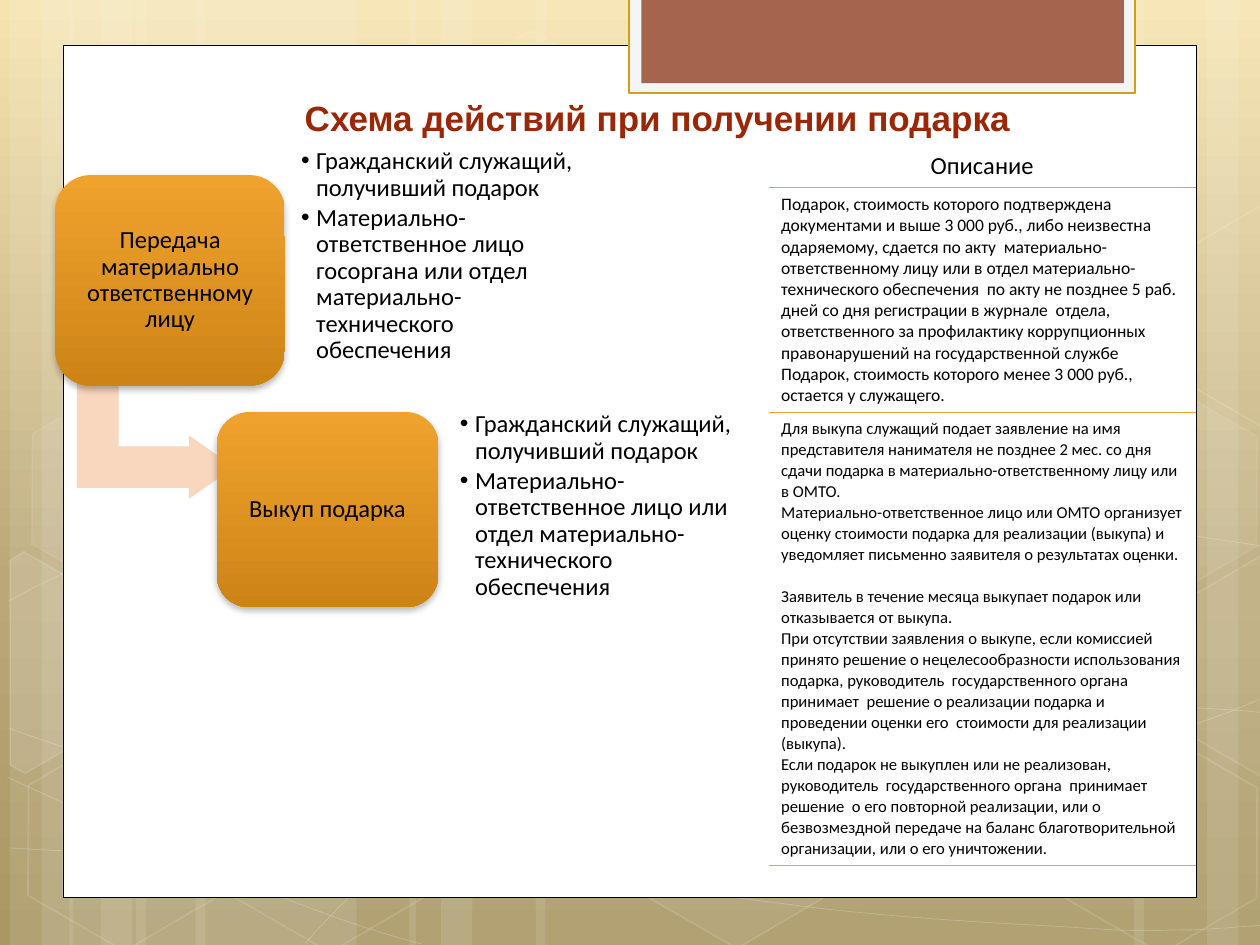
"""Builds a slide on how a civil servant handles a received gift."""
from copy import deepcopy

from lxml.etree import SubElement
from pptx import Presentation
from pptx.dml.color import RGBColor
from pptx.enum.shapes import MSO_SHAPE
from pptx.enum.text import MSO_ANCHOR, PP_ALIGN
from pptx.oxml.ns import qn
from pptx.util import Inches, Pt

WHITE = RGBColor(0xFF, 0xFF, 0xFF)
BLACK = RGBColor(0, 0, 0)
PAPER = RGBColor(0xF5, 0xF5, 0xF5)
GOLD = RGBColor(0xD2, 0xA0, 0x10)
BROWN = RGBColor(0xA5, 0x64, 0x4E)
RED = RGBColor(0x9A, 0x27, 0x08)
PEACH = RGBColor(0xF8, 0xD7, 0xBE)
ORANGE = RGBColor(0xF0, 0xA2, 0x2E)
DARK_ORANGE = RGBColor(0xCE, 0x84, 0x15)
SKY = [(0, RGBColor(0xF6, 0xE4, 0xB0)), (0.62, RGBColor(0xBA, 0xA8, 0x78)),
       (1, RGBColor(0xA9, 0x97, 0x64))]
AMBER = [(0, ORANGE), (1, DARK_ORANGE)]

TITLE = "Схема действий при получении подарка"
STEPS = [
    {"name": "Передача материально ответственному лицу",
     "block": (0.44, 1.39, 1.82, 1.67), "list": (2.33, 1.48, 2.29, 1.11),
     "people": ["Гражданский служащий, получивший подарок",
                "Материально-ответственное лицо госоргана или отдел "
                "материально-технического обеспечения"]},
    {"name": "Выкуп подарка",
     "block": (1.72, 3.27, 1.76, 1.55), "list": (3.59, 3.18, 2.32, 1.67),
     "people": ["Гражданский служащий, получивший подарок",
                "Материально-ответственное лицо или отдел "
                "материально-технического обеспечения"]},
]
ROWS = [
    {"height": 0.34, "size": 14, "para": {"alignment": PP_ALIGN.CENTER}, "texts": ["Описание"]},
    {"height": 1.78, "size": 10, "para": {}, "texts": [
        "Подарок, стоимость которого подтверждена документами и выше 3 000 руб., либо неизвестна "
        "одаряемому, сдается по акту  материально-ответственному лицу или в отдел "
        "материально-технического обеспечения  по акту не позднее 5 раб. дней со дня регистрации "
        "в журнале  отдела, ответственного за профилактику коррупционных правонарушений на "
        "государственной службе",
        "Подарок, стоимость которого менее 3 000 руб., остается у служащего."]},
    {"height": 3.6, "size": 9.5, "para": {"line_spacing": Pt(12)}, "gap_before": 2, "texts": [
        "Для выкупа служащий подает заявление на имя представителя нанимателя не позднее 2 мес. "
        "со дня сдачи подарка в материально-ответственному лицу или в ОМТО.",
        "Материально-ответственное лицо или ОМТО организует оценку стоимости подарка для "
        "реализации (выкупа) и уведомляет письменно заявителя о результатах оценки.",
        "Заявитель в течение месяца выкупает подарок или отказывается от выкупа.",
        "При отсутствии заявления о выкупе, если комиссией принято решение о нецелесообразности "
        "использования подарка, руководитель  государственного органа  принимает  решение о "
        "реализации подарка и проведении оценки его  стоимости для реализации (выкупа).",
        "Если подарок не выкуплен или не реализован, руководитель  государственного органа  "
        "принимает решение  о его повторной реализации, или о безвозмездной передаче на баланс "
        "благотворительной организации, или о его уничтожении."]},
]
BORDERS = [("lnT", 0), ("lnB", 1)]
BORDER_WIDTHS = [0, 0.5, 0.5, 1]
STRIPES = [(1.08, 1.75), (0.08, 0.5), (0.33, 0.83), (1.55, 1.75), (0.55, 0.5), (0.8, 0.83),
           (7.33, 1.75), (9.58, 0.5), (9, 0.83), (4.25, 3.08), (3.25, 0.5), (3.5, 0.83)]
CURVES = [
    [(0.07, 6.73), (0.61, 6.76), (1.15, 6.79), (1.9, 6.78), (2.65, 6.77), (3.58, 6.75),
     (4.58, 6.65), (5.58, 6.55), (7, 6.36), (7.92, 6.17), (8.83, 5.98), (9.77, 5.68), (10.07, 5.51)],
    [(0.07, 4.77), (0.36, 4.61), (0.65, 4.46), (1.21, 4.31), (1.78, 4.16), (2.59, 3.94),
     (3.47, 3.87), (4.36, 3.8), (5.44, 3.79), (6.54, 3.87), (7.64, 3.95), (9.47, 4.26), (10.07, 4.34)],
    [(0.06, 6.17), (1.27, 6.72), (2.47, 7.27), (3.34, 7.49)],
    [(0.07, 5.78), (0.38, 5.89), (0.7, 6), (1.28, 6.16), (1.86, 6.31), (2.73, 6.56), (3.57, 6.73),
     (4.4, 6.9), (5.45, 7.08), (6.28, 7.18), (7.11, 7.29), (8, 7.33), (8.53, 7.36),
     (9.05, 7.4), (9.19, 7.38), (9.45, 7.38), (9.71, 7.37), (9.89, 7.35), (10.07, 7.34)],
    [(2.42, 7.49), (2.6, 7.29), (2.78, 7.09), (3.02, 6.91), (3.26, 6.73), (3.6, 6.53), (3.88, 6.39),
     (4.16, 6.25), (4.33, 6.19), (4.7, 6.09), (5.06, 5.99), (5.73, 5.85), (6.08, 5.78),
     (6.44, 5.71), (6.49, 5.71), (6.8, 5.69), (7.11, 5.66), (7.6, 5.63), (7.94, 5.62),
     (8.29, 5.61), (8.86, 5.62), (9.53, 5.62), (9.71, 5.63), (9.88, 5.64), (10.06, 5.66)],
]
HEXAGONS = [(3.34, 0.36, 4, 8), (4.97, 5.89, 6, 12), (0.11, 5.91, 0, 12), (0.14, 3.12, 7, 8),
            (1.74, 5.92, 0, 12), (7.53, 4.53, 10, 12), (8.34, 5.93, 0, 12), (8.34, 3.14, 7, 8)]
CUT_HEXAGONS = [
    ([(0.08, 4.45), (0.19, 4.38), (0.96, 4.82), (0.95, 5.7), (0.2, 6.14), (0.08, 6.07)], 10),
    ([(9.26, 4.85), (10.01, 4.41), (10.09, 4.46), (10.09, 6.13), (10.02, 6.17), (9.26, 5.73)], 4),
    ([(9.26, 2.07), (10.01, 1.63), (10.1, 1.68), (10.09, 3.35), (10.02, 3.39), (9.26, 2.95)], 0),
]

deck = Presentation()
deck.slide_width, deck.slide_height = Inches(10), Inches(7.5)
page = deck.slides.add_slide(deck.slide_layouts[6])


def assign(target, values):
    for name, value in values.items():
        setattr(target, name, value)


def set_opacity(shape, query, percent):
    for color in shape.element.spPr.xpath(query):
        SubElement(color, qn("a:alpha"), val=str(percent * 1000))


def decorate(shape, fill=None, fill_opacity=100, line=None, width=1, line_opacity=100):
    shape.shadow.inherit = False
    if fill is not None and fill_opacity:
        shape.fill.solid()
        shape.fill.fore_color.rgb = fill
        set_opacity(shape, "./a:solidFill/a:srgbClr", fill_opacity)
    else:
        shape.fill.background()
    if line is None:
        shape.line.fill.background()
    else:
        shape.line.color.rgb = line
        shape.line.width = Pt(width)
        set_opacity(shape, "./a:ln/a:solidFill/a:srgbClr", line_opacity)
    return shape


def add_block(kind, place, **look):
    return decorate(page.shapes.add_shape(kind, *map(Inches, place)), **look)


def add_outline(points, close, **look):
    points = [(Inches(x), Inches(y)) for x, y in points]
    builder = page.shapes.build_freeform(*points[0], scale=1.0)
    builder.add_line_segments(points[1:], close=close)
    return decorate(builder.convert_to_shape(), **look)


def bend(outline):
    segments = outline.element.spPr.xpath(".//a:lnTo")
    drawing = segments[0].getparent()
    for first in range(0, len(segments), 3):
        curve = SubElement(drawing, qn("a:cubicBezTo"))
        for segment in segments[first:first + 3]:
            curve.append(segment[0])
            drawing.remove(segment)


def set_gradient(fill, element, stops):
    fill.gradient()
    fill.gradient_angle = 270
    stop_list = next(element.iter(qn("a:gsLst")))
    while len(stop_list) < len(stops):
        stop_list.append(deepcopy(stop_list[0]))
    for stop, (position, color) in zip(fill.gradient_stops, stops):
        stop.position = position
        stop.color.rgb = color


def write(frame, texts, font, para_format, inset=None, anchor=MSO_ANCHOR.MIDDLE, bullet=False):
    assign(frame, {"word_wrap": True, "vertical_anchor": anchor})
    if inset is not None:
        assign(frame, {f"margin_{side}": Inches(inset) for side in ("left", "right", "top", "bottom")})
    for index, text in enumerate(texts):
        para = frame.paragraphs[0] if index == 0 else frame.add_paragraph()
        assign(para, para_format)
        if bullet:
            props = para._p.get_or_add_pPr()
            props.set("marL", str(Inches(0.12)))
            props.set("indent", str(-Inches(0.12)))
            SubElement(props, qn("a:buFont"), typeface="Arial")
            SubElement(props, qn("a:buChar"), char="•")
        span = para.add_run()
        span.text = text
        assign(span.font, {key: value for key, value in font.items() if key != "color"})
        span.font.color.rgb = font["color"]


def add_text(place, *content, **options):
    box = page.shapes.add_textbox(*map(Inches, place))
    write(box.text_frame, *content, **options)


def body_font(size):
    return {"name": "Calibri", "size": Pt(size), "color": BLACK}


set_gradient(page.background.fill, page.element, SKY)
for left, width in STRIPES:
    add_block(MSO_SHAPE.RECTANGLE, (left, 0, width, 7.5), fill=WHITE, fill_opacity=10)
for knots in CURVES:
    bend(add_outline(knots, False, line=WHITE, width=0.5, line_opacity=20))
for left, top, opacity, edge in HEXAGONS:
    hexagon = add_block(MSO_SHAPE.HEXAGON, (left, top, 1.75, 1.52), fill=WHITE,
                        fill_opacity=opacity, line=WHITE, line_opacity=edge)
    hexagon.rotation = 30
    hexagon.adjustments[0] = 0.285
for corners, opacity in CUT_HEXAGONS:
    add_outline(corners, True, fill=WHITE, fill_opacity=opacity, line=WHITE, line_opacity=12)

add_block(MSO_SHAPE.RECTANGLE, (0.5, 0.36, 9, 6.76), fill=WHITE, line=BLACK, width=0.5)
add_block(MSO_SHAPE.RECTANGLE, (4.99, -0.02, 4.02, 0.76), fill=PAPER, line=GOLD, width=1.25)
add_block(MSO_SHAPE.RECTANGLE, (5.09, -0.02, 3.83, 0.68), fill=BROWN)
add_text((2.32, 0.76, 5.91, 0.39), [TITLE],
         {"name": "Arial", "size": Pt(20), "bold": True, "color": RED}, {}, anchor=MSO_ANCHOR.BOTTOM)

arrow = add_block(MSO_SHAPE.BENT_UP_ARROW, (0.73, 2.83, 1.01, 1.25), fill=PEACH)
arrow.rotation = 90
for index, value in enumerate((0.328, 0.25, 0.358)):
    arrow.adjustments[index] = value

for step in STEPS:
    block = add_block(MSO_SHAPE.ROUNDED_RECTANGLE, step["block"])
    set_gradient(block.fill, block.element, AMBER)
    effects = block.element.spPr.find(qn("a:effectLst"))
    shadow = SubElement(effects, qn("a:outerShdw"), blurRad=str(Pt(4)), dist=str(Pt(2)),
                        dir="5400000", rotWithShape="0")
    SubElement(SubElement(shadow, qn("a:srgbClr"), val="000000"), qn("a:alpha"), val="28000")
    write(block.text_frame, [step["name"]], body_font(14),
          {"alignment": PP_ALIGN.CENTER, "line_spacing": 0.9}, inset=0.14)
    add_text(step["list"], step["people"], body_font(14),
             {"line_spacing": 0.9, "space_after": Pt(2)}, inset=0.06, bullet=True)

heights = [row["height"] for row in ROWS]
table = page.shapes.add_table(len(ROWS), 1, *map(Inches, (6.1, 1.15, 3.39, sum(heights)))).table
assign(table, {"first_row": False, "horz_banding": False})
for index, row in enumerate(ROWS):
    table.rows[index].height = Inches(row["height"])
    cell = table.cell(index, 0)
    write(cell.text_frame, row["texts"], body_font(row["size"]), row["para"], anchor=MSO_ANCHOR.TOP)
    if "gap_before" in row:
        cell.text_frame.paragraphs[row["gap_before"]].space_before = Pt(12)
    props = cell._tc.get_or_add_tcPr()
    for side in ("lnL", "lnR"):
        SubElement(SubElement(props, qn(f"a:{side}")), qn("a:noFill"))
    for side, offset in BORDERS:
        width = BORDER_WIDTHS[index + offset]
        border = SubElement(props, qn(f"a:{side}"), w=str(Pt(width)))
        paint = SubElement(border, qn("a:solidFill" if width else "a:noFill"))
        if width:
            SubElement(paint, qn("a:srgbClr"), val=str(ORANGE))
    cell.fill.solid()
    cell.fill.fore_color.rgb = WHITE

deck.save("out.pptx")
